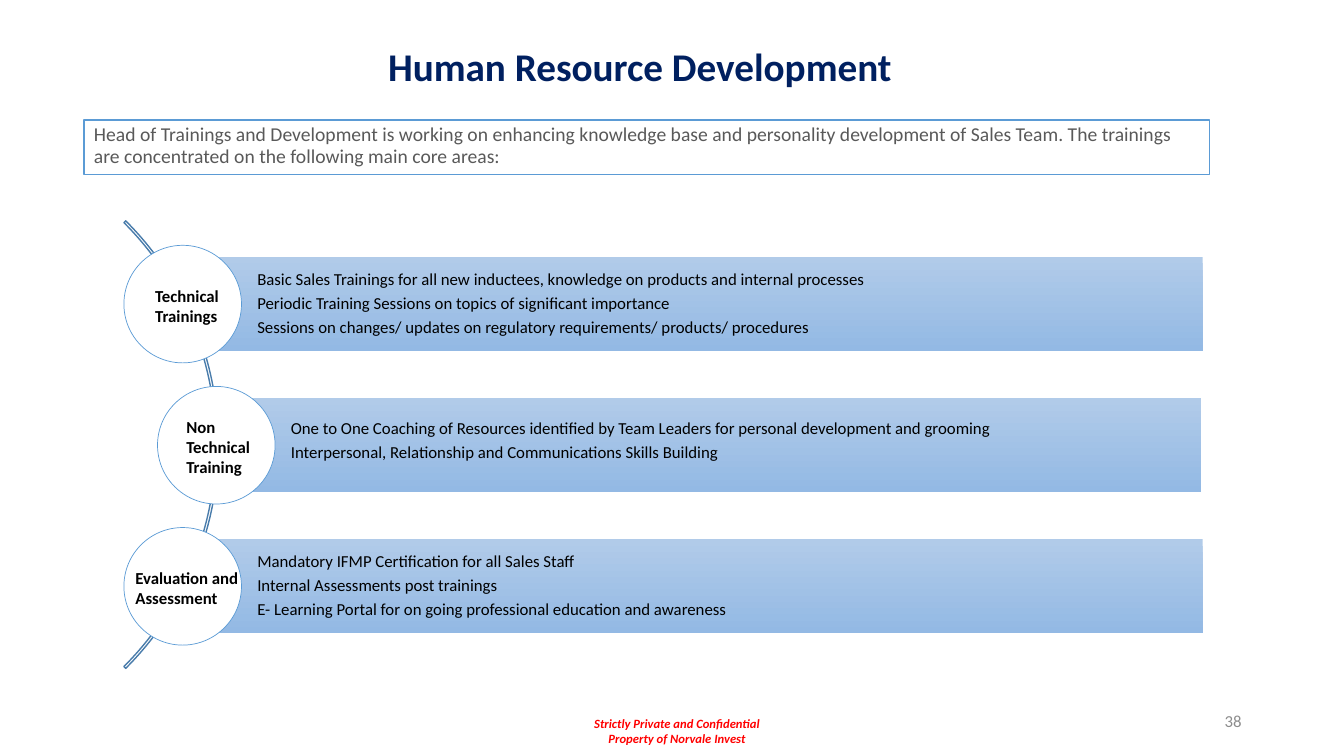
import pptx
import pptx.util
import pptx.dml.color
import pptx.enum.shapes
import pptx.enum.text

Pt = pptx.util.Pt
SHAPE = pptx.enum.shapes.MSO_SHAPE
ALIGN = pptx.enum.text.PP_ALIGN
ANCHOR = pptx.enum.text.MSO_ANCHOR


def colour(hex_string):
    return pptx.dml.color.RGBColor.from_string(hex_string)


def write(shape, lines, size, ink, bold=False, italic=False, align=ALIGN.LEFT,
          anchor=ANCHOR.TOP, spacing=1.0, after=0):
    frame = shape.text_frame
    frame.word_wrap = True
    frame.auto_size = pptx.enum.text.MSO_AUTO_SIZE.NONE
    frame.vertical_anchor = anchor
    frame.text = "\n".join(lines)
    for paragraph in frame.paragraphs:
        paragraph.alignment = align
        paragraph.line_spacing = spacing
        paragraph.space_before = Pt(0)
        paragraph.space_after = Pt(after)
        paragraph.font.name = "Calibri"
        paragraph.font.size = Pt(size)
        paragraph.font.bold = bold
        paragraph.font.italic = italic
        paragraph.font.color.rgb = colour(ink)


deck = pptx.Presentation()
deck.slide_width, deck.slide_height = Pt(960), Pt(540)
slide = deck.slides.add_slide(deck.slide_layouts[5])
shapes = slide.shapes

# Title
title = shapes.title
title.left, title.top, title.width, title.height = Pt(270), Pt(23.8), Pt(407.5), Pt(51)
write(title, ["Human Resource Development"], 28, "002060", bold=True,
      anchor=ANCHOR.MIDDLE, spacing=0.9)

# Footer and page number
footer = shapes.add_textbox(Pt(412.5), Pt(507.6), Pt(142), Pt(29))
write(footer, ["Strictly Private and Confidential", "Property of Norvale Invest"],
      9, "FF0000", bold=True, italic=True, align=ALIGN.CENTER)
page_number = shapes.add_textbox(Pt(678), Pt(500.5), Pt(216), Pt(29))
write(page_number, ["38"], 12, "8C8C8C", align=ALIGN.RIGHT, anchor=ANCHOR.MIDDLE)

# Introduction
intro = shapes.add_shape(SHAPE.RECTANGLE, Pt(60), Pt(85.7), Pt(804), Pt(38.9))
intro.shadow.inherit = False
intro.fill.solid()
intro.fill.fore_color.rgb = colour("FFFFFF")
intro.line.color.rgb = colour("5B9BD5")
intro.line.width = Pt(1)
write(intro, ["Head of Trainings and Development is working on enhancing knowledge base "
              "and personality development of Sales Team. The trainings are concentrated "
              "on the following main core areas:"], 14, "595959", spacing=0.9)

# Arc behind the training areas, from 315 to 45 degrees
arc = shapes.add_shape(SHAPE.BLOCK_ARC, Pt(-296), Pt(91.6), Pt(452), Pt(452))
arc.shadow.inherit = False
arc.adjustments[0], arc.adjustments[1], arc.adjustments[2] = 189, 27, 0.004
arc.fill.background()
arc.line.color.rgb = colour("497CAB")
arc.line.width = Pt(1)

# Training areas: bar left, bar right, extra bottom inset,
# label left, label width, label lines, topics
areas = [
    (130.5, 859, 0, 103.7, 63.4, ["Technical", "Trainings"],
     ["Basic Sales Trainings for all new inductees, knowledge on products and internal processes",
      "Periodic Training Sessions on topics of significant importance",
      "Sessions on changes/ updates on regulatory requirements/ products/ procedures"]),
    (154.5, 858, 5.8, 126, 72, ["Non Technical Training"],
     ["One to One Coaching of Resources identified by Team Leaders for personal "
      "development and grooming",
      "Interpersonal, Relationship and Communications Skills Building"]),
    (130.5, 859, 0, 89.6, 92.2, ["Evaluation and", "Assessment"],
     ["Mandatory IFMP Certification for all Sales Staff",
      "Internal Assessments post trainings",
      "E- Learning Portal for on going professional education and awareness"]),
]
FIRST_MIDDLE, PITCH = 217.2, 100.8
BAR_HEIGHT, DIAMETER, LABEL_HEIGHT = 67, 84, 51

for row, (left, right, extra, label_left, label_width, label_lines, topics) in enumerate(areas):
    middle = FIRST_MIDDLE + row * PITCH

    bar = shapes.add_shape(SHAPE.RECTANGLE, Pt(left), Pt(middle - BAR_HEIGHT / 2),
                           Pt(right - left), Pt(BAR_HEIGHT))
    bar.shadow.inherit = False
    bar.line.fill.background()
    bar.fill.gradient()
    bar.fill.gradient_angle = 270
    for stop, shade in zip(bar.fill.gradient_stops, ("B1CBE9", "93B9E4")):
        stop.color.rgb = colour(shade)
    write(bar, topics, 12, "000000", anchor=ANCHOR.MIDDLE, spacing=0.9, after=4.2)
    bar.text_frame.margin_left = Pt(53.3)
    bar.text_frame.margin_top = bar.text_frame.margin_right = Pt(2.4)
    bar.text_frame.margin_bottom = Pt(2.4 + extra)

    circle = shapes.add_shape(SHAPE.OVAL, Pt(left - DIAMETER / 2), Pt(middle - DIAMETER / 2),
                              Pt(DIAMETER), Pt(DIAMETER))
    circle.shadow.inherit = False
    circle.fill.solid()
    circle.fill.fore_color.rgb = colour("FFFFFF")
    circle.line.color.rgb = colour("5B9BD5")
    circle.line.width = Pt(0.5)

    label = shapes.add_textbox(Pt(label_left), Pt(middle + 1 - LABEL_HEIGHT / 2),
                               Pt(label_width), Pt(LABEL_HEIGHT))
    write(label, label_lines, 12, "000000", bold=True, anchor=ANCHOR.MIDDLE)

deck.save("out.pptx")
